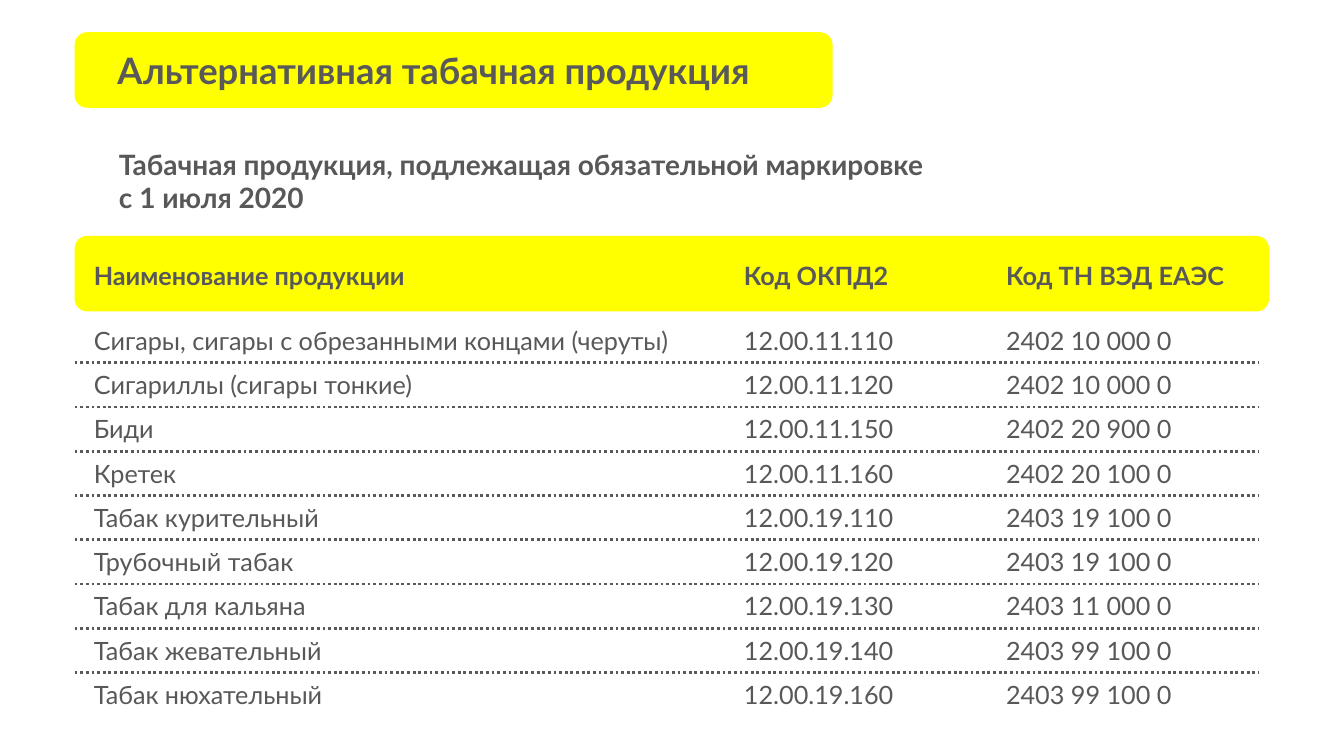
from dataclasses import dataclass

from lxml.etree import SubElement
from pptx import Presentation
from pptx.dml.color import RGBColor
from pptx.enum.dml import MSO_LINE
from pptx.enum.shapes import MSO_CONNECTOR, MSO_SHAPE
from pptx.enum.text import MSO_ANCHOR, MSO_AUTO_SIZE, PP_ALIGN
from pptx.oxml.ns import qn
from pptx.util import Pt


@dataclass(frozen=True)
class Theme:
    font: str = "Lato"
    band: RGBColor = RGBColor(0xFF, 0xFF, 0x00)
    text: RGBColor = RGBColor(0x58, 0x58, 0x58)
    accent: RGBColor = RGBColor(0x59, 0x59, 0x59)
    title_size: int = 26
    subtitle_size: int = 20
    table_size: int = 18


class SlideBuilder:
    """Draws styled elements on one slide, with lengths in points."""

    def __init__(self, slide, theme):
        self.slide = slide
        self.theme = theme

    def fill_text(self, shape, lines, size, color, margins):
        frame = shape.text_frame
        frame.word_wrap = True
        frame.auto_size = MSO_AUTO_SIZE.SHAPE_TO_FIT_TEXT
        frame.margin_left, frame.margin_top, frame.margin_right, frame.margin_bottom = map(Pt, margins)
        frame.text = "\n".join(lines)
        for index, paragraph in enumerate(frame.paragraphs):
            paragraph.alignment = PP_ALIGN.LEFT
            font = paragraph.runs[0].font
            font.name = self.theme.font
            font.size = Pt(size)
            font.bold = index == 0
            font.color.rgb = color
        return frame

    def band(self, left, top, width, height):
        shape = self.slide.shapes.add_shape(
            MSO_SHAPE.ROUNDED_RECTANGLE, Pt(left), Pt(top), Pt(width), Pt(height))
        shape.shadow.inherit = False
        shape.fill.solid()
        shape.fill.fore_color.rgb = self.theme.band
        shape.line.fill.background()
        return shape

    def title(self, text, left, top, width, height):
        shape = self.band(left, top, width, height)
        frame = self.fill_text(shape, [text], self.theme.title_size, self.theme.accent, (28, 8.6, 14.4, 8.6))
        frame.vertical_anchor = MSO_ANCHOR.MIDDLE

    def text(self, lines, size, left, top, width, height):
        shape = self.slide.shapes.add_textbox(Pt(left), Pt(top), Pt(width), Pt(height))
        return self.fill_text(shape, lines, size, self.theme.text, (0, 0.7, 0, 0))

    def column(self, lines, left, top, width, height):
        frame = self.text(lines, self.theme.table_size, left, top, width, height)
        heading, *cells = frame.paragraphs
        heading.space_after = Pt(15)
        for cell in cells:
            cell.space_before = Pt(10)

    def divider(self, left, right, y):
        connector = self.slide.shapes.add_connector(
            MSO_CONNECTOR.STRAIGHT, Pt(left), Pt(y), Pt(right), Pt(y))
        connector.line.color.rgb = self.theme.accent
        connector.line.width = Pt(2)
        connector.line.dash_style = MSO_LINE.ROUND_DOT
        SubElement(connector._element.spPr, qn("a:effectLst"))


PRODUCTS = [
    ("Наименование продукции", "Код ОКПД2", "Код ТН ВЭД ЕАЭС"),
    ("Сигары, сигары с обрезанными концами (черуты)", "12.00.11.110", "2402 10 000 0"),
    ("Сигариллы (сигары тонкие)", "12.00.11.120", "2402 10 000 0"),
    ("Биди", "12.00.11.150", "2402 20 900 0"),
    ("Кретек", "12.00.11.160", "2402 20 100 0"),
    ("Табак курительный", "12.00.19.110", "2403 19 100 0"),
    ("Трубочный табак", "12.00.19.120", "2403 19 100 0"),
    ("Табак для кальяна", "12.00.19.130", "2403 11 000 0"),
    ("Табак жевательный", "12.00.19.140", "2403 99 100 0"),
    ("Табак нюхательный", "12.00.19.160", "2403 99 100 0"),
]
COLUMNS = [(67, 436.3), (531.4, 126), (718.6, 175)]
LEFT = 53.3
ROW_HEIGHT = 31.6


def main():
    presentation = Presentation()
    presentation.slide_width, presentation.slide_height = Pt(960), Pt(540)
    slide = presentation.slides.add_slide(presentation.slide_layouts[6])
    theme = Theme()
    builder = SlideBuilder(slide, theme)

    builder.band(LEFT, 168.5, 853.2, 54)
    builder.title("Альтернативная табачная продукция", LEFT, 23, 541.4, 54)
    builder.text(["Табачная продукция, подлежащая обязательной маркировке с 1 июля 2020"],
                 theme.subtitle_size, 85, 104.4, 581, 49.7)
    for lines, (left, width) in zip(zip(*PRODUCTS), COLUMNS):
        builder.column(lines, left, 185, width, 324.7)
    for row in range(len(PRODUCTS) - 2):
        builder.divider(LEFT, 898.6, 259.2 + row * ROW_HEIGHT)

    presentation.save("out.pptx")


if __name__ == "__main__":
    main()
